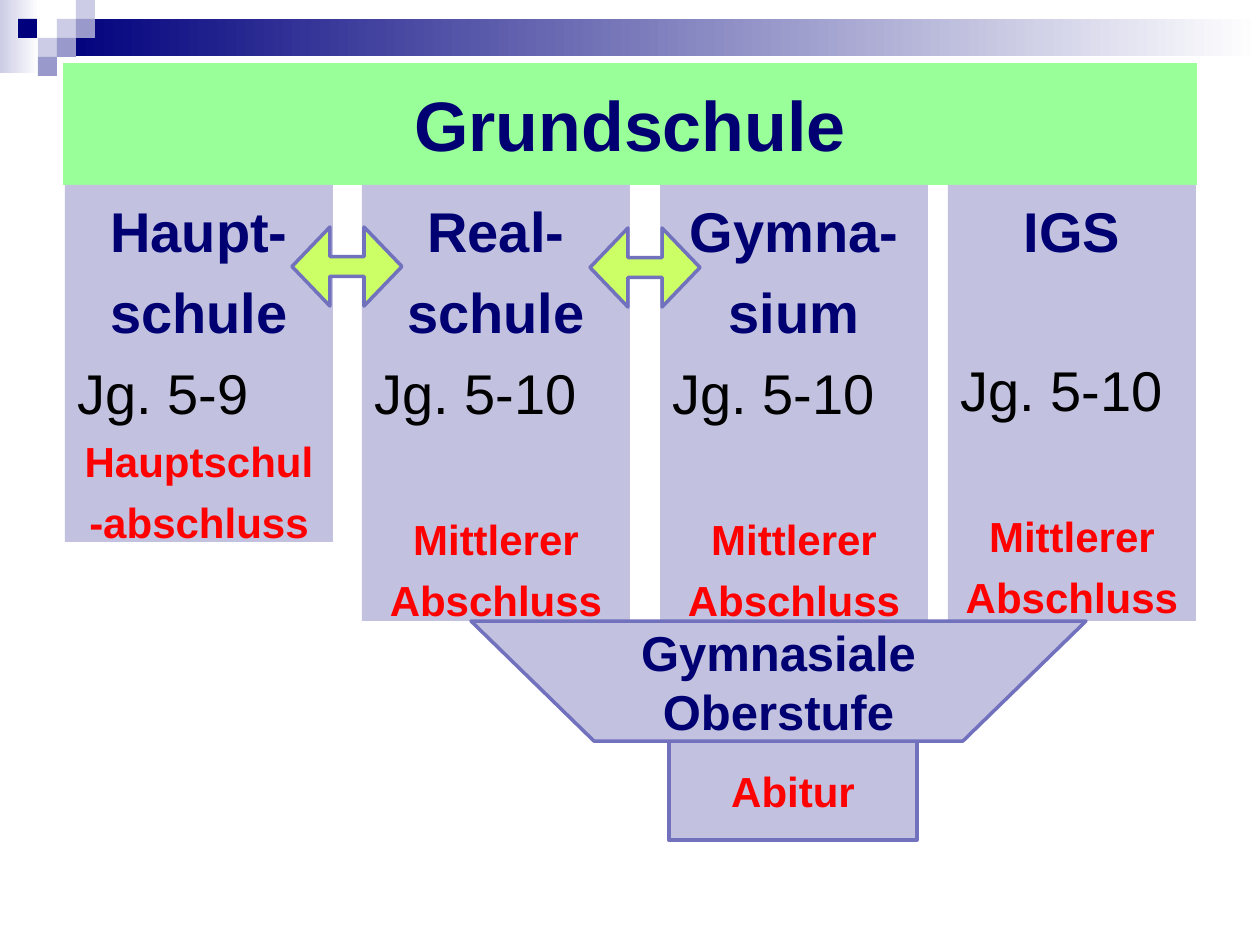
from lxml.etree import SubElement
from pptx import Presentation
from pptx.dml.color import RGBColor
from pptx.enum.shapes import MSO_SHAPE
from pptx.enum.text import MSO_ANCHOR, MSO_AUTO_SIZE, PP_ALIGN
from pptx.oxml.ns import qn
from pptx.util import Pt

NAVY, RED, BLACK = "000072", "FF0000", "000000"
LILAC, EDGE, GREEN, LIME = "C2C2E0", "7171BD", "99FF99", "CCFF66"
DARK, MID, PALE, WHITE = "00007D", "9999CC", "CCCCE6", "FFFFFF"

FADES = [((0, 0, 39, 73), PALE), ((57, 19, 1203, 37), DARK)]
TILE = 19
TILES = [
    (57, 19, PALE), (76, 0, PALE), (76, 19, MID), (38, 38, PALE),
    (18, 19, DARK), (57, 38, MID), (38, 57, MID),
]

STYLES = {
    "title": (dict(size=Pt(40), bold=True), NAVY, PP_ALIGN.CENTER),
    "head": (dict(size=Pt(32), bold=True), NAVY, PP_ALIGN.CENTER),
    "year": (dict(size=Pt(32), bold=False), BLACK, PP_ALIGN.LEFT),
    "exam": (dict(size=Pt(24), bold=True), RED, PP_ALIGN.CENTER),
    "upper": (dict(size=Pt(28), bold=True), NAVY, PP_ALIGN.CENTER),
}
GAPS = {"head": 7.7, "year": 7.7, "exam": 5.8}
SKIP = 44.5

MIDDLE = [("exam", "Mittlerer", 1), ("exam", "Abschluss", 0)]
SCHOOLS = [
    ((65, 185, 268, 357), [
        ("head", "Haupt-", 0), ("head", "schule", 0), ("year", "Jg. 5-9", 0),
        ("exam", "Hauptschul", 0), ("exam", "-abschluss", 0)]),
    ((362, 185, 268, 436), [
        ("head", "Real-", 0), ("head", "schule", 0), ("year", "Jg. 5-10", 0), *MIDDLE]),
    ((660, 185, 268, 436), [
        ("head", "Gymna-", 0), ("head", "sium", 0), ("year", "Jg. 5-10", 0), *MIDDLE]),
    ((948, 185, 248, 436), [
        ("head", "IGS", 0), ("year", "Jg. 5-10", 1), *MIDDLE]),
]
STAGES = [
    (MSO_SHAPE.RECTANGLE, (669, 741, 248, 99), "exam", "Abitur"),
    (MSO_SHAPE.FLOWCHART_MANUAL_OPERATION, (471, 621, 615, 120), "upper",
     "Gymnasiale Oberstufe"),
]
ARROWS = [(292, 227, 110, 79), (590, 228, 110, 79)]


def px(n):
    return round(n * 914400 / 126)


def rgb(code):
    return RGBColor.from_string(code)


def paint(shape, color):
    shape.fill.solid()
    shape.fill.fore_color.rgb = rgb(color)


def place(shape, box):
    for name, n in zip(("left", "top", "width", "height"), box):
        setattr(shape, name, px(n))


def draw(slide, kind, box, color, edge=None):
    shape = slide.shapes.add_shape(kind, *map(px, box))
    shape.shadow.inherit = False
    paint(shape, color)
    if edge:
        shape.line.color.rgb = rgb(edge)
        shape.line.width = Pt(2)
    else:
        shape.line.fill.background()
    return shape


def fade(shape, color):
    shape.fill.gradient()
    shape.fill.gradient_angle = 0
    for stop, code, pos in zip(shape.fill.gradient_stops, (color, WHITE), (0, 1)):
        stop.color.rgb = rgb(code)
        stop.position = pos


def write(para, style, text):
    font, color, align = STYLES[style]
    run = para.add_run()
    run.text = text
    for name, value in dict(font, name="Arial").items():
        setattr(run.font, name, value)
    run.font.color.rgb = rgb(color)
    para.alignment = align


def setup(shape, **extra):
    frame = shape.text_frame
    values = dict(word_wrap=True, auto_size=MSO_AUTO_SIZE.NONE,
                  vertical_anchor=MSO_ANCHOR.MIDDLE)
    for name, value in {**values, **extra}.items():
        setattr(frame, name, value)
    return frame


def fill_list(shape, lines):
    frame = setup(shape, vertical_anchor=MSO_ANCHOR.TOP,
                  margin_top=px(12), margin_bottom=0)
    for i, (style, text, skip) in enumerate(lines):
        para = frame.add_paragraph() if i else frame.paragraphs[0]
        write(para, style, text)
        para.line_spacing = 1.0
        para.space_before = Pt(GAPS[style] + skip * SKIP if i else 0)
        props = para._p.get_or_add_pPr()
        props.set("marL", "0")
        props.set("indent", "0")
        SubElement(props, qn("a:buNone"))


def main():
    deck = Presentation()
    deck.slide_width, deck.slide_height = px(1260), px(945)
    slide = deck.slides.add_slide(deck.slide_layouts[4])
    title, *bodies = slide.placeholders

    place(title, (63, 63, 1134, 122))
    paint(title, GREEN)
    write(setup(title).paragraphs[0], "title", "Grundschule")

    for body, (box, lines) in zip(bodies, SCHOOLS):
        place(body, box)
        paint(body, LILAC)
        fill_list(body, lines)

    for box, color in FADES:
        fade(draw(slide, MSO_SHAPE.RECTANGLE, box, color), color)
    for x, y, color in TILES:
        draw(slide, MSO_SHAPE.RECTANGLE, (x, y, TILE, TILE), color)

    for kind, box, style, text in STAGES:
        shape = draw(slide, kind, box, LILAC, EDGE)
        write(setup(shape).paragraphs[0], style, text)

    for box in ARROWS:
        arrow = draw(slide, MSO_SHAPE.LEFT_RIGHT_ARROW, box, LIME, EDGE)
        for i, value in enumerate((0.25, 0.48)):
            arrow.adjustments[i] = value

    deck.save("out.pptx")


if __name__ == "__main__":
    main()
